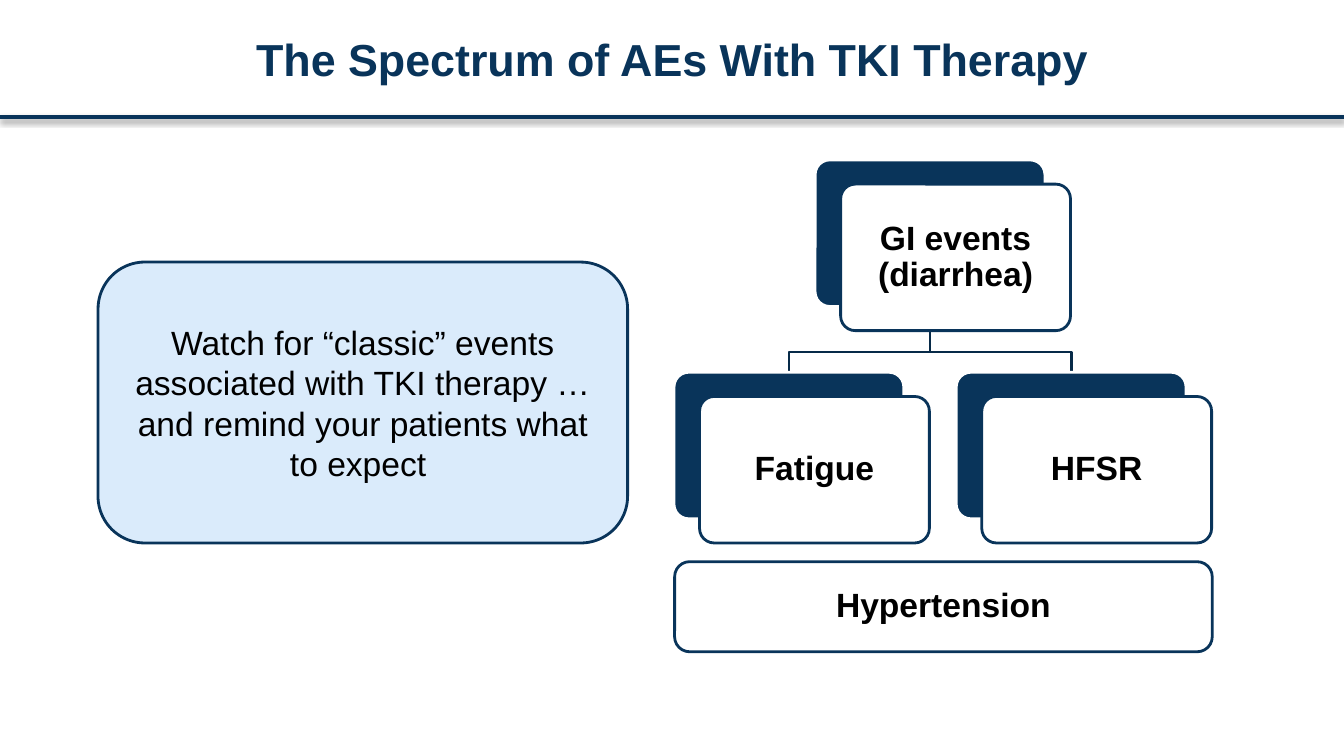
import pptx
import pptx.util
import pptx.dml.color
import pptx.enum.shapes
import pptx.enum.text
import pptx.oxml
import pptx.oxml.ns

Inches, Pt = pptx.util.Inches, pptx.util.Pt
RGB = pptx.dml.color.RGBColor.from_string
ROUND = pptx.enum.shapes.MSO_SHAPE.ROUNDED_RECTANGLE
CENTER = pptx.enum.text.PP_ALIGN.CENTER
MIDDLE = pptx.enum.text.MSO_ANCHOR.MIDDLE

THEME = {
    "navy": "09345A", "link": "072A48", "pale": "DAEBFB",
    "white": "FFFFFF", "black": "000000",
    "font": "Arial", "title": 24, "text": 18, "rule": 2, "edge": 1.5,
}


def write(shape, text, size, color, bold, inset=0.1, spacing=1.0):
    frame = shape.text_frame
    frame.text = text
    pad = Inches(inset)
    form = {"word_wrap": True, "vertical_anchor": MIDDLE,
            "auto_size": pptx.enum.text.MSO_AUTO_SIZE.NONE,
            "margin_left": pad, "margin_right": pad,
            "margin_top": pad, "margin_bottom": pad}
    for name, value in form.items():
        setattr(frame, name, value)
    par = frame.paragraphs[0]
    par.alignment = CENTER
    par.line_spacing = spacing
    for name, value in {"name": THEME["font"], "size": Pt(size), "bold": bold}.items():
        setattr(par.font, name, value)
    par.font.color.rgb = RGB(color)


def box(left, top, width, height, fill, edge, adj=None):
    """Add a rounded box; adj is the corner radius as a share of the short side."""
    shape = slide.shapes.add_shape(
        ROUND, Inches(left), Inches(top), Inches(width), Inches(height))
    shape.shadow.inherit = False
    shape.fill.solid()
    shape.fill.fore_color.rgb = RGB(fill)
    shape.line.color.rgb = RGB(edge)
    shape.line.width = Pt(THEME["edge"])
    if adj is not None:
        shape.adjustments[0] = adj
    return shape


deck = pptx.Presentation()
deck.slide_width = Inches(10)
deck.slide_height = Inches(10) * 9 // 16
slide = deck.slides.add_slide(deck.slide_layouts[5])

# Title and the rule under it
title = slide.shapes.title
title.left, title.top = Inches(0.1), Inches(0.03)
title.width, title.height = Inches(9.8), Inches(0.81)
write(title, "The Spectrum of AEs With TKI Therapy", THEME["title"], THEME["navy"], True)

rule = slide.shapes.add_connector(
    pptx.enum.shapes.MSO_CONNECTOR.STRAIGHT, 0, Inches(0.87), Inches(10), Inches(0.87))
rule.line.color.rgb = RGB(THEME["navy"])
rule.line.width = Pt(THEME["rule"])
rule._element.spPr.append(pptx.oxml.parse_xml(
    f'<a:effectLst {pptx.oxml.ns.nsdecls("a")}>'
    f'<a:outerShdw blurRad="{Pt(3.1)}" dist="{Pt(1.6)}" dir="5400000" rotWithShape="0">'
    f'<a:srgbClr val="{THEME["black"]}"><a:alpha val="38000"/></a:srgbClr>'
    '</a:outerShdw></a:effectLst>'))

# Tree: one parent card above two child cards
wide, high, shift = 1.71, 1.09, (0.19, 0.18)
mid, step = 6.92, 1.05
top, low, bend = 1.19, 2.77, 2.62

for end in (mid + step, mid - step):
    pen = slide.shapes.build_freeform(Inches(mid), Inches(top + high))
    pen.add_line_segments(
        [(Inches(x), Inches(y)) for x, y in ((mid, bend), (end, bend), (end, low))],
        close=False)
    link = pen.convert_to_shape()
    link.shadow.inherit = False
    link.fill.background()
    link.line.color.rgb = RGB(THEME["link"])
    link.line.width = Pt(THEME["edge"])

cards = [("GI events (diarrhea)", mid, top),
         ("Fatigue", mid - step, low),
         ("HFSR", mid + step, low)]
for text, x, y in cards:
    left = x - wide / 2
    box(left, y, wide, high, THEME["navy"], THEME["white"], 0.1)
    card = box(left + shift[0], y + shift[1], wide, high,
               THEME["white"], THEME["navy"], 0.1)
    write(card, text, THEME["text"], THEME["black"], True, 0.16, 0.9)

# Advice on the left, wide card below the tree
note = box(0.73, 1.95, 3.94, 2.09, THEME["pale"], THEME["navy"])
write(note, "Watch for “classic” events associated with TKI therapy … "
      "and remind your patients what to expect ", THEME["text"], THEME["black"], False)

base = box(5.02, 4.18, 4, 0.67, THEME["white"], THEME["navy"])
write(base, "Hypertension", THEME["text"], THEME["black"], True, 0.19, 0.9)

deck.save("out.pptx")
